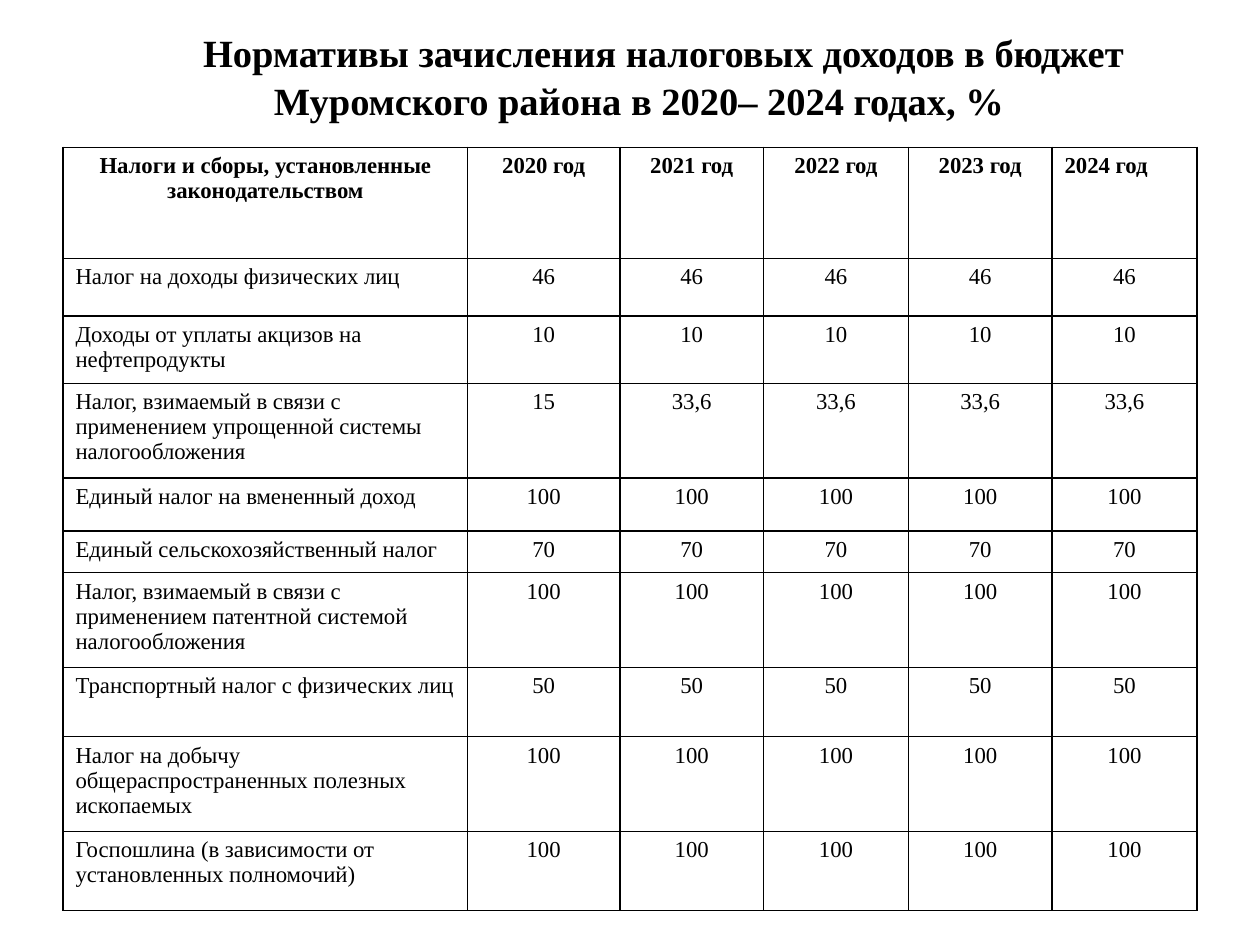
import pptx
import pptx.dml.color
import pptx.enum.text
import pptx.util
from dataclasses import dataclass
from lxml import etree
from pptx.oxml.ns import qn
from pptx.util import Inches

ALIGN = pptx.enum.text.PP_ALIGN


@dataclass(frozen=True)
class Theme:
    font: str = "Times New Roman"
    ink: str = "000000"
    paper: str = "FFFFFF"
    title_size: int = 22
    table_size: int = 13
    border: int = 1


THEME = Theme()

TITLE = "Нормативы зачисления налоговых доходов в бюджет Муромского района в 2020– 2024 годах, %"
YEARS = range(2020, 2025)
HEADER = ["Налоги и сборы, установленные законодательством"] + [f"{year} год" for year in YEARS]

# Tax name, row height, rate for each year
TAXES = [
    ("Налог на доходы физических лиц", 0.46, ["46"] * 5),
    ("Доходы от уплаты акцизов на нефтепродукты", 0.53, ["10"] * 5),
    ("Налог, взимаемый в связи с применением упрощенной системы налогообложения", 0.75,
     ["15"] + ["33,6"] * 4),
    ("Единый налог на вмененный доход", 0.42, ["100"] * 5),
    ("Единый сельскохозяйственный налог", 0.33, ["70"] * 5),
    ("Налог, взимаемый в связи с применением патентной системой налогообложения", 0.75,
     ["100"] * 5),
    ("Транспортный налог с физических лиц", 0.55, ["50"] * 5),
    ("Налог на добычу общераспространенных полезных ископаемых", 0.75, ["100"] * 5),
    ("Госпошлина (в зависимости от установленных полномочий)", 0.63, ["100"] * 5),
]
HEADER_HEIGHT = 0.88
COLUMN_WIDTHS = [3.21, 1.21, 1.14, 1.15, 1.14, 1.15]


def style_paragraph(para, size, bold, align):
    para.alignment = align
    para.font.name = THEME.font
    para.font.size = pptx.util.Pt(size)
    para.font.bold = bold
    para.font.color.rgb = pptx.dml.color.RGBColor.from_string(THEME.ink)


def add_borders(cell):
    properties = cell._tc.get_or_add_tcPr()
    for position, side in enumerate(("lnL", "lnR", "lnT", "lnB")):
        line = etree.Element(qn(f"a:{side}"), w=str(pptx.util.Pt(THEME.border)))
        fill = etree.SubElement(line, qn("a:solidFill"))
        etree.SubElement(fill, qn("a:srgbClr"), val=THEME.ink)
        properties.insert(position, line)


def add_title(page, left, top, width, height):
    box = page.shapes.add_textbox(Inches(left), Inches(top), Inches(width), Inches(height))
    box.text_frame.word_wrap = True
    para = box.text_frame.paragraphs[0]
    para.text = TITLE
    para.line_spacing = 1.04
    style_paragraph(para, THEME.title_size, True, ALIGN.CENTER)
    # First-line indent
    para._p.get_or_add_pPr().set("indent", str(Inches(0.39)))


def add_tax_table(page, left, top, width, height):
    rows = [HEADER] + [[name, *rates] for name, _, rates in TAXES]
    heights = [HEADER_HEIGHT] + [row_height for _, row_height, _ in TAXES]
    table = page.shapes.add_table(len(rows), len(HEADER), Inches(left), Inches(top),
                                  Inches(width), Inches(height)).table
    table.first_row = table.horz_banding = False
    for column, column_width in zip(table.columns, COLUMN_WIDTHS):
        column.width = Inches(column_width)
    for row, row_height in zip(table.rows, heights):
        row.height = Inches(row_height)

    last_column = len(HEADER) - 1
    for row_index, texts in enumerate(rows):
        is_header = row_index == 0
        # The last heading and the tax names are set left
        left_column = last_column if is_header else 0
        for column_index, text in enumerate(texts):
            cell = table.cell(row_index, column_index)
            cell.fill.solid()
            cell.fill.fore_color.rgb = pptx.dml.color.RGBColor.from_string(THEME.paper)
            add_borders(cell)
            para = cell.text_frame.paragraphs[0]
            para.text = text
            align = ALIGN.LEFT if column_index == left_column else ALIGN.CENTER
            style_paragraph(para, THEME.table_size, is_header, align)


def main():
    deck = pptx.Presentation()
    deck.slide_width, deck.slide_height = Inches(10), Inches(7.5)
    page = deck.slides.add_slide(deck.slide_layouts[6])
    add_title(page, 0.58, 0.17, 8.98, 1)
    add_tax_table(page, 0.5, 1.17, 9, 6.04)
    deck.save("out.pptx")


if __name__ == "__main__":
    main()
